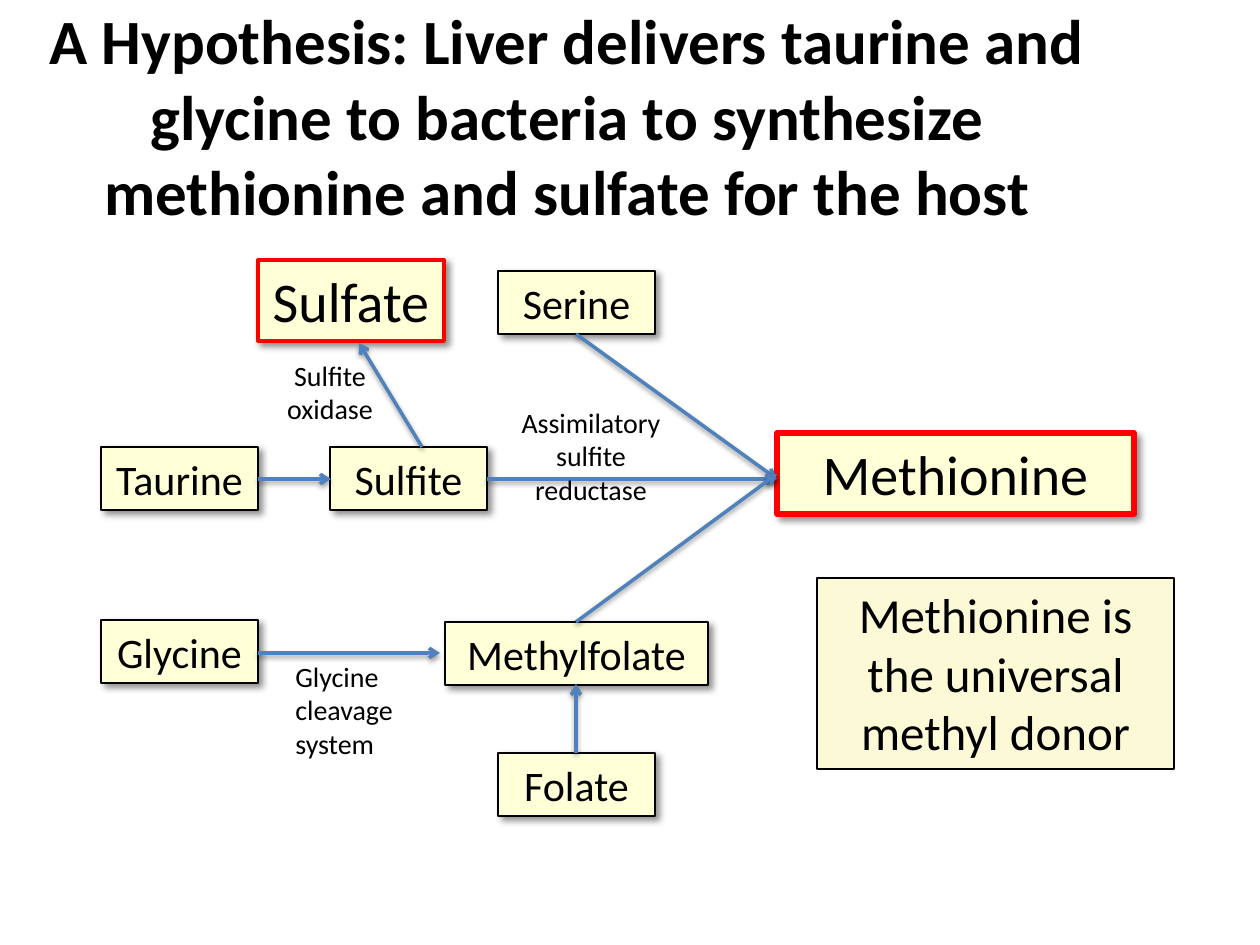
from lxml.etree import SubElement
from pptx import Presentation
from pptx.dml.color import RGBColor
from pptx.enum.shapes import MSO_CONNECTOR, MSO_SHAPE
from pptx.enum.text import MSO_ANCHOR, MSO_AUTO_SIZE, PP_ALIGN
from pptx.oxml.ns import qn
from pptx.util import Pt

SCALE = 914400 / 126
FONT = "Calibri"
BLACK = RGBColor(0x00, 0x00, 0x00)
RED = RGBColor(0xFF, 0x00, 0x00)
BLUE = RGBColor(0x4F, 0x81, 0xBD)
CREAM = RGBColor(0xFF, 0xFF, 0xD8)
PALE = RGBColor(0xFC, 0xF9, 0xD6)

NODE_WIDTH, NODE_HEIGHT = 157, 63
PRODUCT_HEIGHT = 81

SUBSTRATES = [
    ("Taurine", 0, 187, NODE_WIDTH),
    ("Glycine", 0, 360, NODE_WIDTH),
    ("Methylfolate", 344, 362, 263),
    ("Folate", 397, 493, NODE_WIDTH),
    ("Sulfite", 229, 187, NODE_WIDTH),
    ("Serine", 397, 11, NODE_WIDTH),
]
PRODUCTS = [
    ("Methionine", 676, 173, 357, 3),
    ("Sulfate", 157, 0, 186, 2.25),
]
REACTIONS = [
    (157, 393, 339, 393),
    (475, 493, 475, 424),
    (157, 219, 230, 219),
    (475, 74, 676, 219),
    (386, 219, 676, 219),
    (475, 362, 676, 214),
    (321, 187, 258, 83),
]
ENZYMES = [
    ("Glycine cleavage system", 182, 393, 151, 115, PP_ALIGN.LEFT),
    ("Assimilatory sulfite reductase", 397, 139, 186, 115, PP_ALIGN.CENTER),
    ("Sulfite oxidase", 136, 92, 186, 81, PP_ALIGN.CENTER),
]


def px(*lengths):
    return [round(length * SCALE) for length in lengths]


def write(shape, text, size, align=PP_ALIGN.CENTER, bold=False):
    frame = shape.text_frame
    frame.word_wrap = True
    para = frame.paragraphs[0]
    para.alignment = align
    span = para.add_run()
    span.text = text
    span.font.name = FONT
    span.font.size = Pt(size)
    span.font.bold = bold
    span.font.color.rgb = BLACK


def add_shadow(shape, blur, distance, angle, opacity):
    properties = shape._element.spPr
    for old in properties.findall(qn("a:effectLst")):
        properties.remove(old)
    effects = SubElement(properties, qn("a:effectLst"))
    shadow = SubElement(
        effects, qn("a:outerShdw"),
        blurRad=str(Pt(blur)), dist=str(Pt(distance)),
        dir=str(angle * 60000), algn="tl", rotWithShape="0")
    color = SubElement(shadow, qn("a:srgbClr"), val=str(BLACK))
    SubElement(color, qn("a:alpha"), val=str(opacity * 1000))


def add_panel(page, box, text, size, fill=CREAM, line=BLACK, weight=0.75):
    panel = page.shapes.add_shape(MSO_SHAPE.RECTANGLE, *px(*box))
    panel.shadow.inherit = False
    panel.fill.solid()
    panel.fill.fore_color.rgb = fill
    panel.line.color.rgb = line
    panel.line.width = Pt(weight)
    panel.text_frame.vertical_anchor = MSO_ANCHOR.TOP
    panel.text_frame.auto_size = MSO_AUTO_SIZE.SHAPE_TO_FIT_TEXT
    write(panel, text, size)
    return panel


def add_node(page, box, text, size, line=BLACK, weight=0.75):
    node = add_panel(page, box, text, size, CREAM, line, weight)
    add_shadow(node, 4, 3, 45, 43)


def add_arrow(page, ends):
    arrow = page.shapes.add_connector(MSO_CONNECTOR.STRAIGHT, *px(*ends))
    arrow.line.color.rgb = BLUE
    arrow.line.width = Pt(2)
    SubElement(arrow.line._get_or_add_ln(), qn("a:tailEnd"), type="arrow")
    add_shadow(arrow, 3.1, 1.6, 90, 38)


def add_label(page, box, text, align):
    label = page.shapes.add_textbox(*px(*box))
    label.text_frame.auto_size = MSO_AUTO_SIZE.SHAPE_TO_FIT_TEXT
    write(label, text, 16, align)


def add_title(page, box, text):
    title = page.shapes.title
    title.left, title.top, title.width, title.height = px(*box)
    title.text_frame.auto_size = MSO_AUTO_SIZE.NONE
    title.text_frame.vertical_anchor = MSO_ANCHOR.MIDDLE
    write(title, text, 36, bold=True)


def add_pathway(page, left, top):
    for name, x, y, width in SUBSTRATES:
        add_node(page, (left + x, top + y, width, NODE_HEIGHT), name, 24)
    for name, x, y, width, weight in PRODUCTS:
        box = (left + x, top + y, width, PRODUCT_HEIGHT)
        add_node(page, box, name, 32, RED, weight)
    for x1, y1, x2, y2 in REACTIONS:
        add_arrow(page, (left + x1, top + y1, left + x2, top + y2))
    for name, x, y, width, height, align in ENZYMES:
        add_label(page, (left + x, top + y, width, height), name, align)


def main():
    deck = Presentation()
    deck.slide_width, deck.slide_height = px(1260, 945)
    page = deck.slides.add_slide(deck.slide_layouts[5])
    add_title(page, (0, 36, 1134, 158),
              "A Hypothesis: Liver delivers taurine and glycine to bacteria "
              "to synthesize methionine and sulfate for the host")
    add_pathway(page, 101, 260)
    add_panel(page, (817, 578, 357, 191),
              "Methionine is the universal methyl donor", 28, PALE)
    deck.save("out.pptx")


if __name__ == "__main__":
    main()
